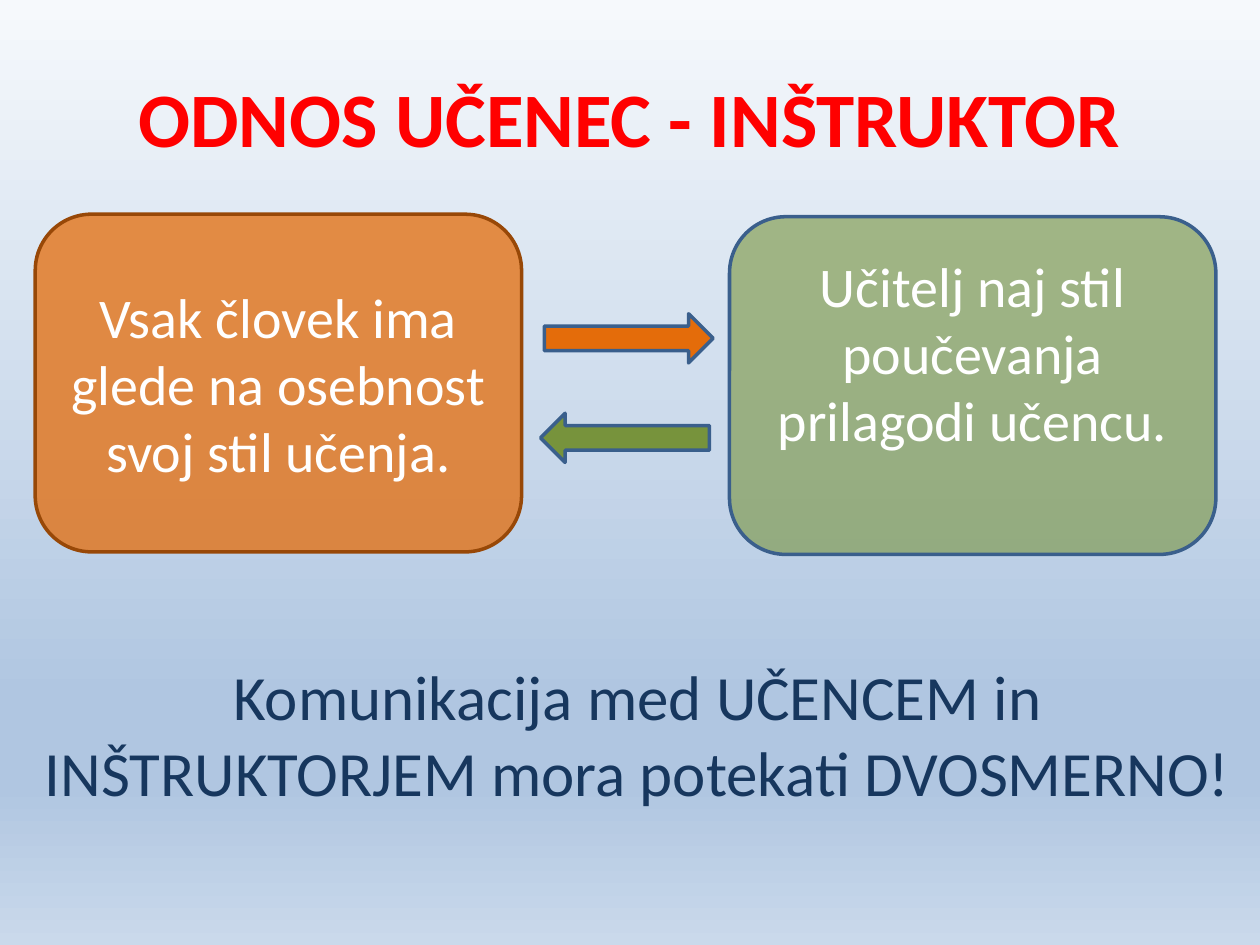
import pptx
import pptx.util
import pptx.dml.color
import pptx.enum.shapes
import pptx.enum.text
import pptx.oxml
import pptx.oxml.ns
import lxml.etree

Pt = pptx.util.Pt
RGB = pptx.dml.color.RGBColor
KIND = pptx.enum.shapes.MSO_SHAPE
MID = pptx.enum.text.MSO_ANCHOR.MIDDLE
TOP = pptx.enum.text.MSO_ANCHOR.TOP
MAIN = pptx.oxml.ns.qn("a:srgbClr")[:-len("srgbClr")]

RED = RGB(0xFF, 0x00, 0x00)
NAVY = RGB(0x17, 0x37, 0x5E)
WHITE = RGB(0xFF, 0xFF, 0xFF)
ORANGE = RGB(0xE4, 0x6C, 0x0A)
BROWN = RGB(0x98, 0x48, 0x07)
GREEN = RGB(0x77, 0x93, 0x3C)
BLUE = RGB(0x3A, 0x5F, 0x8C)
PALE = RGB(0xF6, 0xF9, 0xFC)
SKY = RGB(0xB0, 0xC6, 0xE1)
MIST = RGB(0xCA, 0xD9, 0xEB)


def write(shape, text, anchor, style, low=3.6, gap=0):
    frame = shape.text_frame
    form = {"word_wrap": True, "vertical_anchor": anchor, "margin_bottom": Pt(low)}
    for key, value in form.items():
        setattr(frame, key, value)
    para = frame.paragraphs[0]
    para.alignment = pptx.enum.text.PP_ALIGN.CENTER
    para.space_before = Pt(gap)
    run = para.add_run()
    run.text = text
    for key, value in style.items():
        if key == "color":
            run.font.color.rgb = value
        else:
            setattr(run.font, key, value)


def draw(kind, place, fill, edge):
    shape = slide.shapes.add_shape(kind, *map(Pt, place))
    shape.shadow.inherit = False
    shape.fill.solid()
    shape.fill.fore_color.rgb = fill
    shape.line.color.rgb = edge
    shape.line.width = Pt(2)
    return shape


deck = pptx.Presentation()
deck.slide_width, deck.slide_height = Pt(720), Pt(540)
slide = deck.slides.add_slide(deck.slide_layouts[6])

back = slide.background.fill
back.gradient()
back.gradient_angle = 270
stops = next(slide.background._cSld.iter(MAIN + "gsLst"))
for stop in list(stops):
    stops.remove(stop)
for spot, tint in ((0, PALE), (74, SKY), (83, SKY), (100, MIST)):
    stop = lxml.etree.SubElement(stops, MAIN + "gs", pos=str(spot * 1000))
    lxml.etree.SubElement(stop, MAIN + "srgbClr", val=str(tint))

texts = [
    ("ODNOS UČENEC - INŠTRUKTOR", (36, 21.6, 648, 90), MID, 0,
     {"name": "Calibri", "size": Pt(44), "bold": True, "color": RED}),
    ("Komunikacija med UČENCEM in INŠTRUKTORJEM mora potekati DVOSMERNO!",
     (8.64, 372.24, 711.36, 149.76), TOP, 7.2,
     {"name": "Calibri", "size": Pt(36), "color": NAVY}),
]
for text, place, anchor, gap, style in texts:
    box = slide.shapes.add_textbox(*map(Pt, place))
    write(box, text, anchor, style, gap=gap)

label = {"name": "Calibri", "size": Pt(32), "color": WHITE}
cards = [
    ("Vsak človek ima glede na osebnost svoj stil učenja.",
     20.16, 122.4, ORANGE, BROWN, 75, 3.6),
    ("Učitelj naj stil poučevanja prilagodi učencu.",
     416.88, 123.84, GREEN, BLUE, 60, 42),
]
for text, left, top, fill, edge, alpha, low in cards:
    card = draw(KIND.ROUNDED_RECTANGLE, (left, top, 277.92, 192.96), fill, edge)
    tint = card.fill._xPr.find(MAIN + "solidFill")[0]
    lxml.etree.SubElement(tint, MAIN + "alpha", val=str(alpha * 1000))
    write(card, text, MID, label, low=low)

for left, top, fill, turn in ((311.04, 179.28, ORANGE, 0), (308.88, 236.16, GREEN, 180)):
    arrow = draw(KIND.RIGHT_ARROW, (left, top, 96.48, 28.08), fill, BLUE)
    arrow.rotation = turn

deck.save("out.pptx")
